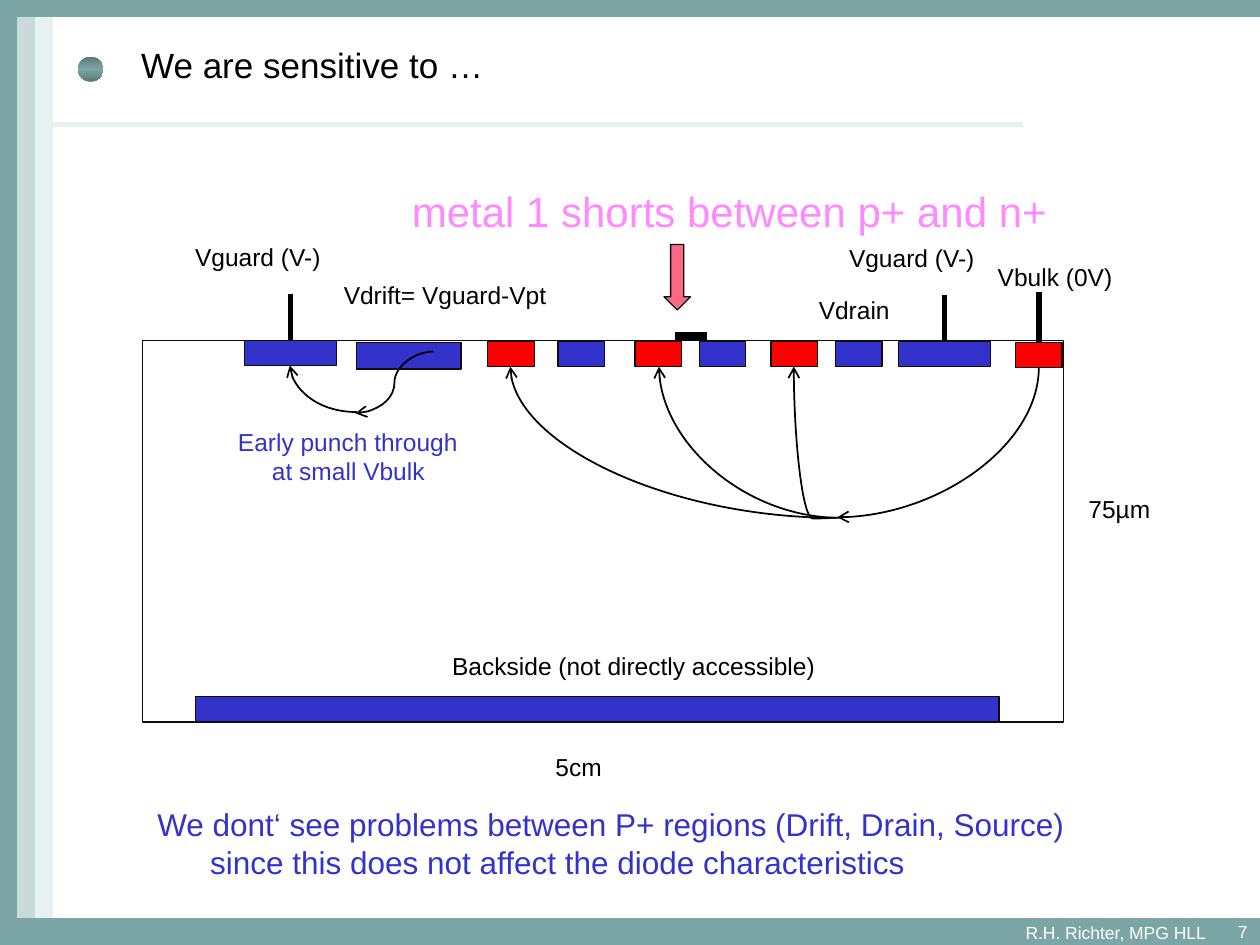
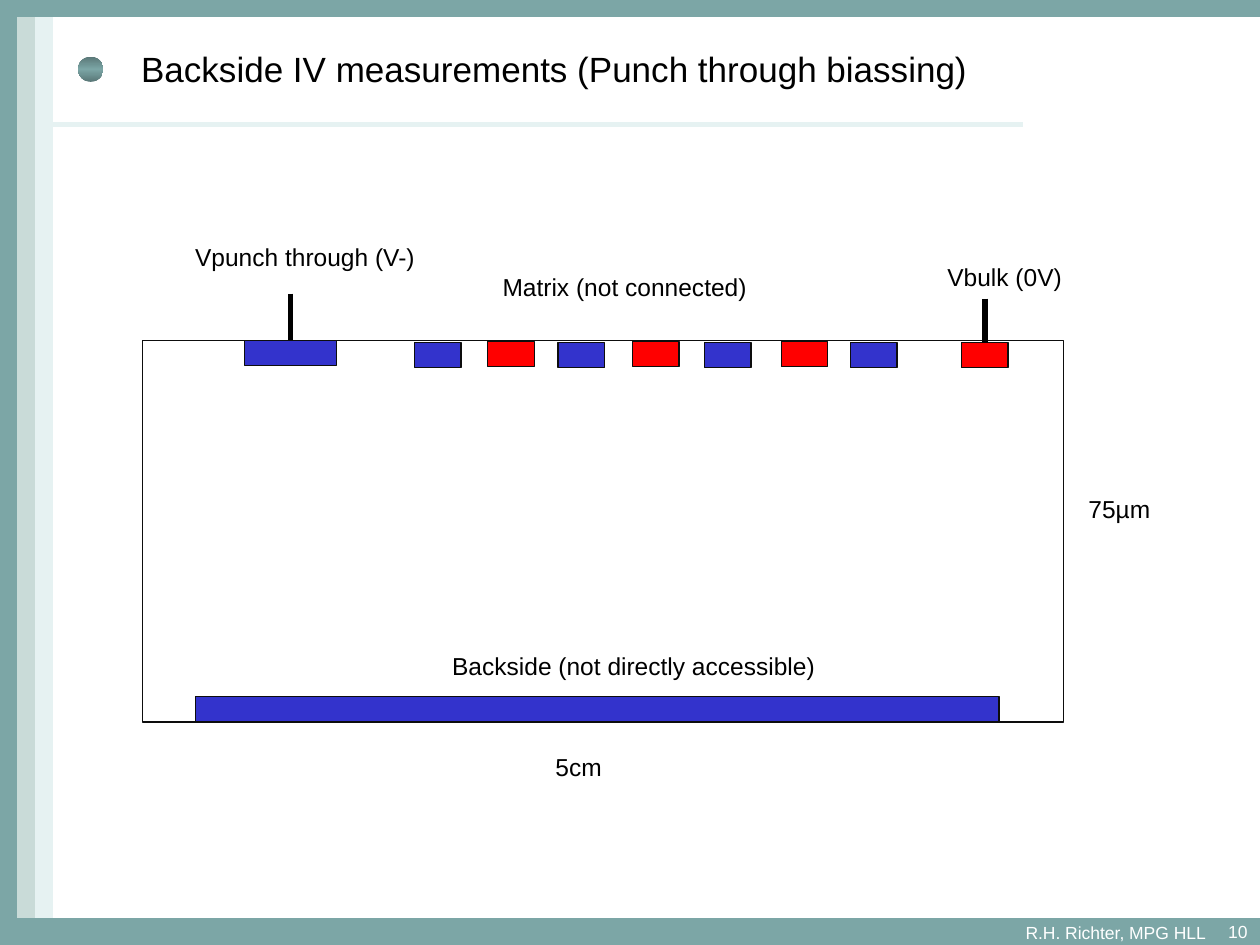
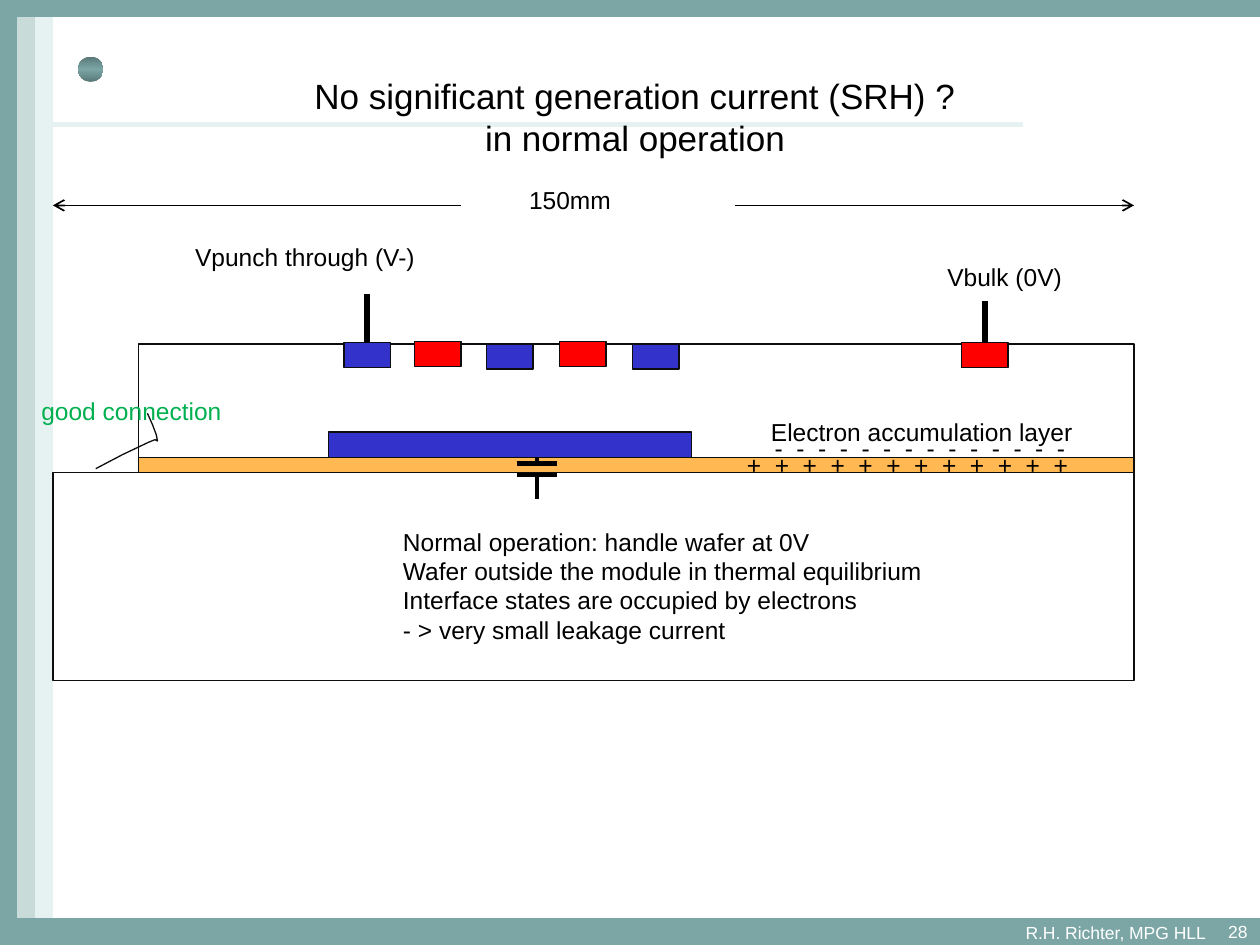
from lxml import etree
from pptx import Presentation
from pptx.dml.color import RGBColor
from pptx.enum.shapes import MSO_CONNECTOR, MSO_SHAPE
from pptx.enum.text import MSO_ANCHOR, MSO_AUTO_SIZE, PP_ALIGN
from pptx.oxml.ns import qn
from pptx.util import Pt

PX = 9144  # EMU per px, 100 px to the inch
FONT = "Arial"
COLORS = {
    "teal": "7CA6A6", "teal_dark": "597777", "sage": "C9DBD8", "mist": "E6F2F2",
    "ink": "0D0D0D", "black": "000000", "white": "FFFFFF",
    "blue": "3333CC", "red": "FF0000", "pink": "FF89FF", "rose": "FC6985",
    "oxide": "FFB852", "green": "00B050",
}


def rgb(name):
    return RGBColor.from_string(COLORS[name])


class Deck:
    """Holds the style and the current slide."""

    def __init__(self):
        self.prs = Presentation()
        self.prs.slide_width, self.prs.slide_height = 1000 * PX, 750 * PX

    def new_slide(self, title, number, y=21, h=67, x=42, align=PP_ALIGN.LEFT, lift=0):
        self.s = self.prs.slides.add_slide(self.prs.slide_layouts[6])
        # Frame bands
        self.shape(13, 0, 15, 729, "sage", "sage")
        self.shape(28, 0, 14, 750, "mist", "mist")
        self.shape(0, 729, 1000, 21, "teal", "teal")
        self.shape(0, 0, 13, 729, "teal", "teal")
        self.shape(0, 0, 1000, 13, "teal", "teal")
        # Title with its rule and bullet
        self.line(32, 99, 812, 99, 3, "mist")
        self.ball(62, 45, 20)
        self.text(title, x, y, 850, h, 20, align=align, anchor=MSO_ANCHOR.MIDDLE,
                  insets=(70, 5, 10, 5 + lift), wrap=True)
        # Footer
        self.text("R.H. Richter, MPG HLL", 701, 730, 256, 20, 10, "white", PP_ALIGN.RIGHT,
                  MSO_ANCHOR.MIDDLE, (0, 0, 0, 0), wrap=True)
        self.text(str(number), 900, 726, 100, 24, 10, "white", PP_ALIGN.RIGHT, wrap=True)

    def shape(self, x, y, w, h, fill=None, line="ink", kind=MSO_SHAPE.RECTANGLE):
        sp = self.s.shapes.add_shape(kind, x * PX, y * PX, w * PX, h * PX)
        return self.paint(sp, fill, line)

    def paint(self, sp, fill, line):
        sp.shadow.inherit = False
        if fill:
            sp.fill.solid()
            sp.fill.fore_color.rgb = rgb(fill)
        else:
            sp.fill.background()
        if line:
            sp.line.color.rgb = rgb(line)
            sp.line.width = Pt(0.75)
        else:
            sp.line.fill.background()
        return sp

    def ball(self, x, y, size):
        sp = self.shape(x, y, size, size, line=None, kind=MSO_SHAPE.OVAL)
        sp.fill.gradient()
        sp.fill.gradient_angle = 90
        stops = sp._element.spPr.find(".//" + qn("a:gsLst"))
        for gs in list(stops):
            stops.remove(gs)
        for percent, color in ((0, "teal_dark"), (50, "teal"), (100, "teal_dark")):
            gs = etree.SubElement(stops, qn("a:gs"), pos=str(percent * 1000))
            etree.SubElement(gs, qn("a:srgbClr"), val=COLORS[color])

    def freeform(self, points):
        fb = self.s.shapes.build_freeform(*points[0], scale=PX)
        fb.add_line_segments(points[1:], close=False)
        return self.paint(fb.convert_to_shape(), None, "ink")

    def line(self, x1, y1, x2, y2, width, color="black", arrow=False,
             kind=MSO_CONNECTOR.STRAIGHT):
        cx = self.s.shapes.add_connector(
            kind, int(x1 * PX), int(y1 * PX), int(x2 * PX), int(y2 * PX))
        cx.line.color.rgb = rgb(color)
        cx.line.width = Pt(width)
        spPr = cx._element.spPr
        if arrow:
            etree.SubElement(spPr.find(qn("a:ln")), qn("a:tailEnd"), type="arrow")
        etree.SubElement(spPr, qn("a:effectLst"))
        return cx

    def curve(self, x, y, w, h, angle, bends=2, flip=False, adjust=None):
        top, bottom = (y + h, y) if flip else (y, y + h)
        cx = self.line(x, top, x + w, bottom, 1, arrow=True, kind=MSO_CONNECTOR.CURVE)
        spPr = cx._element.spPr
        spPr.find(qn("a:xfrm")).set("rot", str(angle * 60000))
        geom = spPr.find(qn("a:prstGeom"))
        geom.set("prst", f"curvedConnector{bends}")
        if adjust is not None:
            av = geom.find(qn("a:avLst"))
            etree.SubElement(av, qn("a:gd"), name="adj1", fmla=f"val {adjust}")

    def lead(self, pad, top):
        """Contact wire down to the top of an electrode."""
        x = (pad.left + pad.width / 2) / PX
        cx = self.line(x, top, x, pad.top / PX, 3.25)
        cx.end_connect(pad, 0)

    def pads(self, xs, first, blue_y=271):
        """Electrodes of alternating type."""
        order = ["blue", "red"] if first == "blue" else ["red", "blue"]
        for i, x in enumerate(xs):
            color = order[i % 2]
            self.shape(x, blue_y if color == "blue" else 271, 37, 20, color)

    def text(self, text, x, y, w, h=34, size=14, color="black", align=PP_ALIGN.LEFT,
             anchor=MSO_ANCHOR.TOP, insets=(10, 5, 10, 5), wrap=False, indent=0, spread=0):
        tf = self.s.shapes.add_textbox(x * PX, y * PX, w * PX, h * PX).text_frame
        tf.word_wrap = wrap
        tf.auto_size = MSO_AUTO_SIZE.NONE if wrap else MSO_AUTO_SIZE.SHAPE_TO_FIT_TEXT
        tf.vertical_anchor = anchor
        tf.margin_left, tf.margin_top, tf.margin_right, tf.margin_bottom = (
            v * PX for v in insets)
        tf.text = text
        for i, p in enumerate(tf.paragraphs):
            p.alignment = align
            if i and indent:
                p._p.get_or_add_pPr().set("marL", str(indent * PX))
            for r in p.runs:
                r.font.name, r.font.size = FONT, Pt(size)
                r.font.color.rgb = rgb(color)
                if spread:
                    r._r.get_or_add_rPr().set("spc", str(spread))

    def sensor(self):
        """Sensor cross-section with guard and backside electrodes."""
        self.shape(113, 270, 731, 303)
        guard = self.shape(194, 270, 73, 20, "blue")
        self.shape(155, 553, 638, 20, "blue")
        self.lead(guard, 233)
        self.text("Backside (not directly accessible)", 349, 512, 336, 47)
        self.text("75µm", 854, 387, 75, 47)
        self.text("5cm", 431, 592, 62, 47)


def sensitive_slide(d):
    d.new_slide("We are sensitive to …", 7, h=89, lift=29)
    d.sensor()
    # Electrodes
    d.shape(283, 272, 83, 21, "blue")
    d.pads([387, 443, 504, 555, 612, 663], "red")
    bulk = d.shape(806, 272, 37, 20, "red")
    guard = d.shape(713, 271, 73, 20, "blue")
    d.lead(bulk, 232)
    d.lead(guard, 234)
    # Labels
    d.text("Vguard (V-)", 145, 187, 120)
    d.text("Vguard (V-)", 664, 188, 120)
    d.text("Vbulk (0V)", 782, 203, 112)
    d.text("Vdrift= Vguard-Vpt", 263, 217, 188)
    d.text("Vdrain", 640, 229, 77)
    d.text("metal 1 shorts between p+ and n+", 317, 142, 529, 50, 24, "pink")
    # Current paths
    d.curve(685, 271, 119, 160, 90)
    d.curve(585, 336, 120, 30, 270, bends=3, flip=True, adjust=-500)
    d.curve(523, 291, 144, 120, 180)
    d.curve(405, 291, 259, 120, 180)
    d.curve(282, 279, 62, 49, 180, bends=3, flip=True)
    d.curve(230, 290, 53, 37, 180)
    # Remarks
    d.text("Early punch through\nat small Vbulk", 179, 334, 195, 57, color="blue", indent=27)
    d.text("We dont‘ see problems between P+ regions (Drift, Drain, Source)\n"
           "since this does not affect the diode characteristics",
           115, 634, 747, 71, 18, "blue", indent=42)
    # Metal short
    d.shape(527, 194, 21, 52, "rose", kind=MSO_SHAPE.DOWN_ARROW)
    d.line(536, 267, 561, 267, 4.75)


def backside_slide(d):
    d.new_slide("Backside IV measurements (Punch through biassing)", 10)
    d.sensor()
    d.pads([329, 387, 443, 502, 559, 620, 675], "blue", 272)
    bulk = d.shape(763, 272, 37, 20, "red")
    d.lead(bulk, 237)
    d.text("Vpunch through (V-)", 145, 187, 195)
    d.text("Matrix (not connected)", 389, 211, 233, 47)
    d.text("Vbulk (0V)", 742, 203, 112)


def generation_slide(d):
    d.new_slide("No significant generation current (SRH) ?\vin normal operation", 28,
                x=49, y=59, align=PP_ALIGN.CENTER)
    # Oxide and wafers
    d.shape(110, 363, 790, 12, "oxide")
    d.shape(110, 273, 790, 90)
    d.shape(42, 375, 858, 165)
    # Electrodes
    d.shape(261, 343, 288, 20, "blue")
    punch = d.shape(273, 272, 37, 20, "blue")
    d.pads([329, 386, 444, 502], "red", 273)
    bulk = d.shape(763, 272, 37, 20, "red")
    d.lead(punch, 233)
    d.lead(bulk, 239)
    # Capacitor through the oxide
    for y in (368, 377):
        d.line(410, y, 442, y, 2.5)
    d.line(426, 363, 426, 368, 2)
    d.line(426, 377, 426, 396, 2)
    # Charges on both sides of the interface
    d.text(" ".join("+" * 12), 583, 352, 282, spread=194)
    d.text(" ".join("-" * 14), 605, 339, 258, spread=194)
    d.text("Electron accumulation layer", 602, 326, 261)
    # Edge connection
    d.freeform([(76, 372), (97, 361), (118, 351), (123, 349), (125, 350),
                (124, 345), (121, 337), (117, 328)])
    d.text("good connection", 23, 309, 164, color="green")
    # Labels
    d.text("Vpunch through (V-)", 145, 187, 195)
    d.text("Vbulk (0V)", 742, 203, 112)
    d.text("Normal operation: handle wafer at 0V\n"
           "Wafer outside the module in thermal equilibrium\n"
           "Interface states are occupied by electrons\n"
           "- > very small leakage current", 310, 413, 434, 104)
    # Wafer width
    d.line(366, 163, 42, 163, 1, arrow=True)
    d.line(583, 163, 900, 163, 1, arrow=True)
    d.text("150mm", 410, 142, 85)


def main():
    d = Deck()
    sensitive_slide(d)
    backside_slide(d)
    generation_slide(d)
    d.prs.save("out.pptx")


if __name__ == "__main__":
    main()
